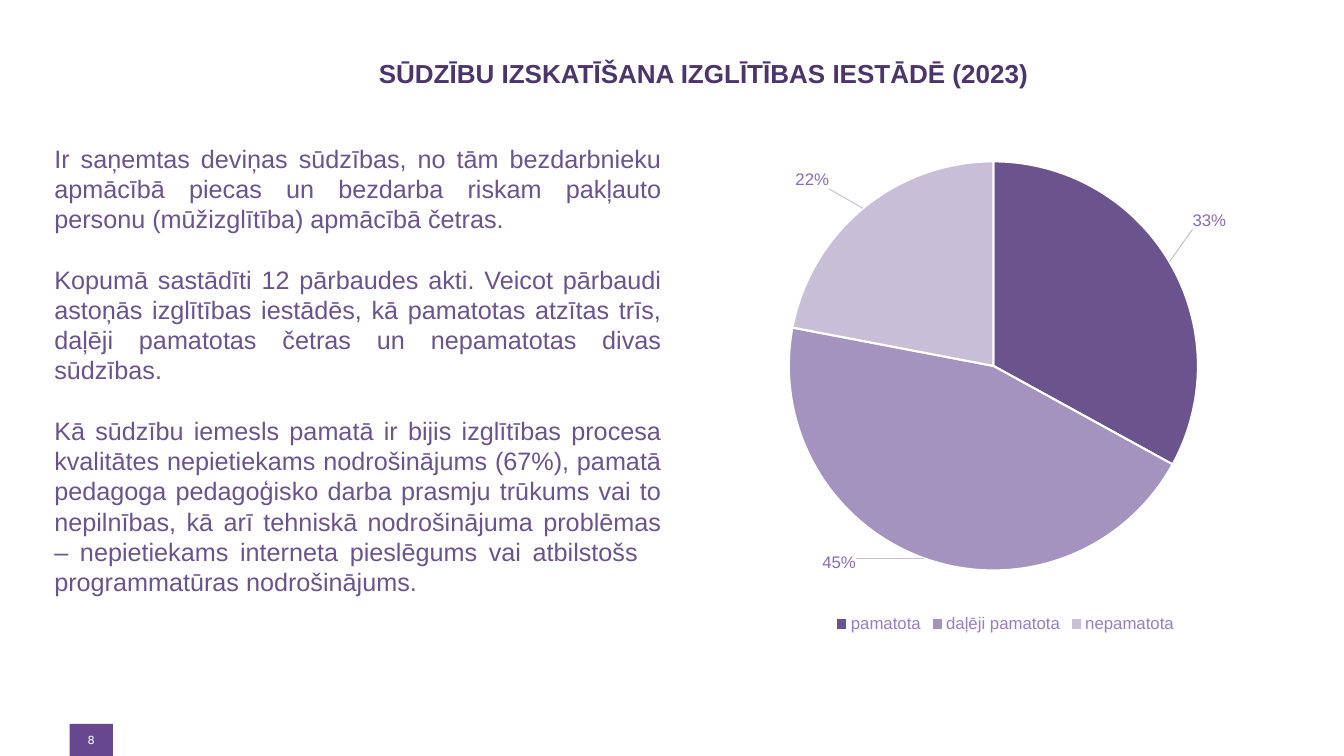
from dataclasses import dataclass

from lxml import etree
from pptx import Presentation
from pptx.chart import data as chart_data
from pptx.dml import color
from pptx.enum import chart as chart_enum, shapes, text
from pptx.oxml import ns, parse_xml
from pptx.util import Pt

WHITE = color.RGBColor(0xFF, 0xFF, 0xFF)
BADGE_PURPLE = color.RGBColor(0x66, 0x47, 0x90)
BODY_PURPLE = color.RGBColor(0x6B, 0x54, 0x8D)
MID_PURPLE = color.RGBColor(0xA5, 0x93, 0xBF)
PALE_PURPLE = color.RGBColor(0xC8, 0xBE, 0xD8)
TITLE_PURPLE = color.RGBColor(0x4C, 0x34, 0x6C)
LABEL_PURPLE = color.RGBColor(0x8B, 0x6A, 0xB6)
LEGEND_PURPLE = color.RGBColor(0x9A, 0x7E, 0xC0)


@dataclass(frozen=True)
class Area:
    left: float
    top: float
    width: float
    height: float

    def lengths(self):
        return [Pt(side) for side in (self.left, self.top, self.width, self.height)]


@dataclass(frozen=True)
class Style:
    size: float
    fill: color.RGBColor
    name: str = "Arial"
    bold: bool = False


@dataclass(frozen=True)
class Slice:
    name: str
    share: float
    fill: color.RGBColor
    label_dx: float
    label_dy: float


TITLE = "SŪDZĪBU IZSKATĪŠANA IZGLĪTĪBAS IESTĀDĒ (2023)"
FINDINGS = [
    "Ir saņemtas deviņas sūdzības, no tām bezdarbnieku apmācībā piecas un bezdarba "
    "riskam pakļauto personu (mūžizglītība) apmācībā četras.",
    "Kopumā sastādīti 12 pārbaudes akti. Veicot pārbaudi astoņās izglītības iestādēs, "
    "kā pamatotas atzītas trīs, daļēji pamatotas četras un nepamatotas divas sūdzības.",
    "Kā sūdzību iemesls pamatā ir bijis izglītības procesa kvalitātes nepietiekams "
    "nodrošinājums (67%), pamatā pedagoga pedagoģisko darba prasmju trūkums vai to "
    "nepilnības, kā arī tehniskā nodrošinājuma problēmas – nepietiekams interneta "
    "pieslēgums vai atbilstošs   programmatūras nodrošinājums.",
]
SLICES = [
    Slice("pamatota", 0.33, BODY_PURPLE, 0.03, -0.06),
    Slice("daļēji pamatota", 0.45, MID_PURPLE, -0.11, -0.02),
    Slice("nepamatota", 0.22, PALE_PURPLE, -0.05, -0.03),
]
LINE_PITCH = 21.6


def set_font(font, style: Style) -> None:
    font.size = Pt(style.size)
    font.name = style.name
    font.bold = style.bold
    font.color.rgb = style.fill


def write(frame, lines: list[str], style: Style, align, gap: float = 0,
          pitch: float | None = None) -> None:
    frame.word_wrap = True
    for index, line in enumerate(lines):
        para = frame.add_paragraph() if index else frame.paragraphs[0]
        para.alignment = align
        if index:
            para.space_before = Pt(gap)
        if pitch:
            para.line_spacing = Pt(pitch)
        span = para.add_run()
        span.text = line
        set_font(span.font, style)


def manual_layout(**values) -> etree._Element:
    parts = "".join(f'<c:{key} val="{value}"/>' for key, value in values.items())
    return parse_xml(
        f"<c:layout {ns.nsdecls('c')}><c:manualLayout>{parts}</c:manualLayout></c:layout>"
    )


def add_badge(page) -> None:
    badge = page.shapes.add_shape(
        shapes.MSO_SHAPE.RECTANGLE, *Area(49.7, 517, 31, 23).lengths())
    badge.shadow.inherit = False
    badge.fill.solid()
    badge.fill.fore_color.rgb = BADGE_PURPLE
    badge.line.fill.background()
    frame = badge.text_frame
    frame.margin_left = frame.margin_right = Pt(3)
    frame.margin_top = frame.margin_bottom = Pt(3)
    frame.vertical_anchor = text.MSO_ANCHOR.MIDDLE
    write(frame, ["8"], Style(8, WHITE, "DejaVu Sans"), text.PP_ALIGN.CENTER)


def add_pie(page, area: Area) -> None:
    shares = chart_data.CategoryChartData(number_format="0%")
    shares.categories = [part.name for part in SLICES]
    shares.add_series("Series 1", [part.share for part in SLICES])
    pie = page.shapes.add_chart(
        chart_enum.XL_CHART_TYPE.PIE, *area.lengths(), shares).chart
    set_font(pie.font, Style(10, BADGE_PURPLE))
    pie.has_title = False
    pie.has_legend = True
    pie.legend.position = chart_enum.XL_LEGEND_POSITION.BOTTOM
    pie.legend.include_in_layout = False
    set_font(pie.legend.font, Style(12, LEGEND_PURPLE))

    plot_area = pie._chartSpace.chart.plotArea
    for layout in plot_area.findall(ns.qn("c:layout")):
        plot_area.remove(layout)
    plot_area.insert(0, manual_layout(
        layoutTarget="inner", xMode="edge", yMode="edge", x=0.14, y=0.03, w=0.68, h=0.84))

    series = pie.plots[0].series[0]
    label_style = Style(12, LABEL_PURPLE)
    labels = series.data_labels
    labels.show_value = True
    labels.number_format = "0%"
    labels.number_format_is_linked = False
    labels.position = chart_enum.XL_LABEL_POSITION.OUTSIDE_END
    set_font(labels.font, label_style)
    for index, part in enumerate(SLICES):
        point = series.points[index]
        point.format.fill.solid()
        point.format.fill.fore_color.rgb = part.fill
        point.format.line.color.rgb = WHITE
        point.format.line.width = Pt(1.5)
        set_font(point.data_label.font, label_style)
        point.data_label.position = chart_enum.XL_LABEL_POSITION.OUTSIDE_END
    for label, part in zip(labels._element.findall(ns.qn("c:dLbl")), SLICES):
        label.insert(1, manual_layout(x=part.label_dx, y=part.label_dy))
    labels._element.append(parse_xml(
        f"<c:leaderLines {ns.nsdecls('c', 'a')}><c:spPr><a:ln w=\"9525\"><a:solidFill>"
        f'<a:srgbClr val="{PALE_PURPLE}"/></a:solidFill></a:ln></c:spPr></c:leaderLines>'))


def main() -> None:
    deck = Presentation()
    deck.slide_width, deck.slide_height = Pt(960), Pt(540)
    page = deck.slides.add_slide(deck.slide_layouts[6])
    add_badge(page)
    add_pie(page, Area(503.3, 103, 429.8, 352))
    body_box = page.shapes.add_textbox(*Area(31.7, 98.6, 447.8, 356.4).lengths())
    write(body_box.text_frame, FINDINGS, Style(18, BODY_PURPLE),
          text.PP_ALIGN.JUSTIFY, gap=LINE_PITCH, pitch=LINE_PITCH)
    title_box = page.shapes.add_textbox(*Area(223.9, 37.4, 557.3, 29.5).lengths())
    write(title_box.text_frame, [TITLE], Style(18.6, TITLE_PURPLE, bold=True),
          text.PP_ALIGN.CENTER)
    deck.save("out.pptx")


if __name__ == "__main__":
    main()
